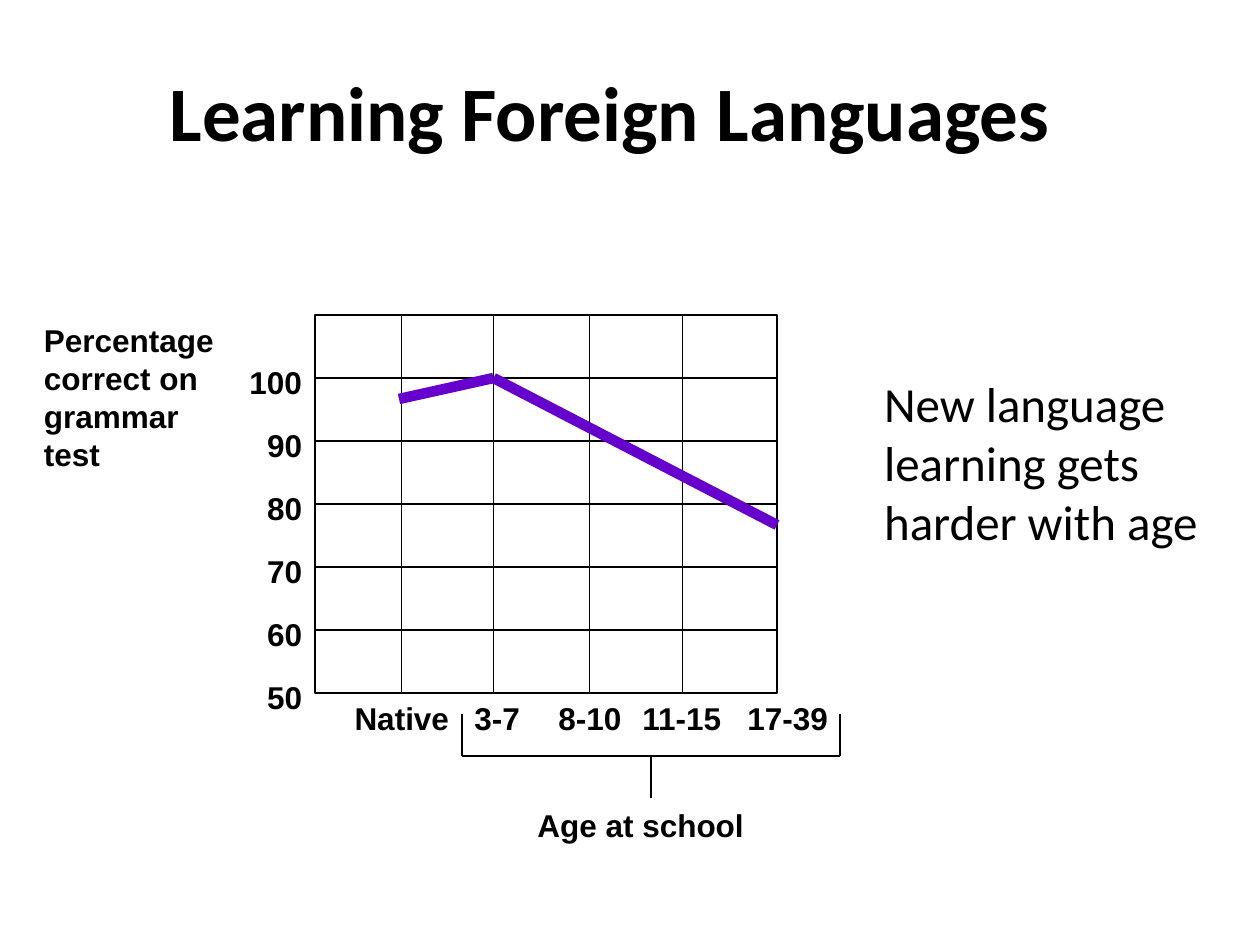
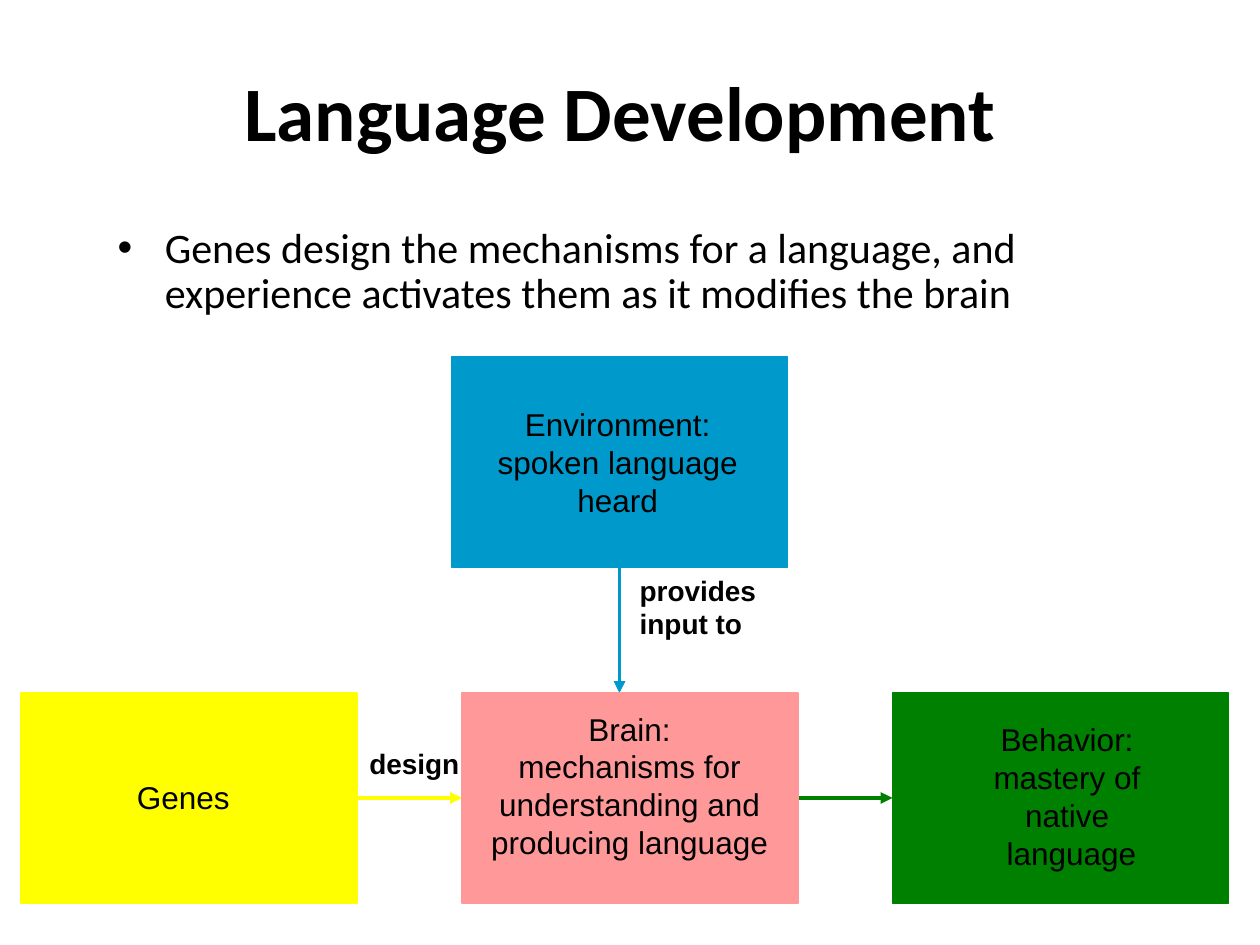
from itertools import pairwise

from lxml.etree import SubElement
from pptx import Presentation
from pptx.dml.color import RGBColor
from pptx.enum.shapes import MSO_CONNECTOR, MSO_SHAPE
from pptx.enum.text import MSO_ANCHOR, MSO_AUTO_SIZE, PP_ALIGN
from pptx.oxml.ns import qn
from pptx.util import Pt

BLACK = RGBColor(0x00, 0x00, 0x00)
WHITE = RGBColor(0xFF, 0xFF, 0xFF)
PURPLE = RGBColor(0x66, 0x00, 0xCC)
YELLOW = RGBColor(0xFF, 0xFF, 0x00)
BLUE = RGBColor(0x00, 0x99, 0xCC)
PINK = RGBColor(0xFF, 0x99, 0x99)
GREEN = RGBColor(0x00, 0x80, 0x00)

# Font formats
TITLE = {"name": "Calibri", "size": Pt(44), "bold": True}
POINT = {"name": "Calibri", "size": Pt(28)}
LIST = {"name": "Calibri", "size": Pt(24)}
LABEL = {"name": "Arial", "size": Pt(18), "bold": True}
PLAIN = {"name": "Arial", "size": Pt(18), "bold": False}
NOTE = {"name": "Arial", "size": Pt(16), "bold": True}

# Slide 1: test scores by age; boxes are (left, top, width, height)
AGE_TITLE = "Learning Foreign Languages"
AGE_POINT = "New language learning gets harder with age"
SCORES = ["100", "90", "80", "70", "60", "50"]
AGES = [("Native", 195.5, 68.5), ("3-7", 264, 40.5), ("8-10", 312, 50.5),
        ("11-15", 360, 60.5), ("17-39", 420, 60.5)]
AXES = [(["Percentage", "correct on", "grammar", "test"], (18, 180, 117, 94)),
        (["Age at school"], (300, 457, 132.5, 29))]
GRID = (180, 180, 264, 216)
STEP = 36
COLS = [229.5, 282, 337, 390]
TREND = [(228, 228), (282, 216), (444, 300)]
BRACE = [(264, 408), (264, 432), (480, 432), (480, 408)]
STEM = [(372, 432), (372, 456)]

# Slide 2: flow from genes and environment to behavior
FLOW_TITLE = "Language Development"
FLOW_POINT = ("Genes design the mechanisms for a language, "
              "and experience activates them as it modifies the brain")
SIZE = (192, 120)
BLOCKS = [
    (YELLOW, (12, 396), ["Genes"], (70.5, 441, 68.5, 29)),
    (BLUE, (258, 204), ["Environment:", "spoken language", "heard"],
     (277, 228, 152, 73)),
    (PINK, (264, 396),
     ["Brain:", "mechanisms for", "understanding and", "producing language"],
     (273, 402, 173.5, 94)),
    (GREEN, (510, 396), ["Behavior:", "mastery of", "native", " language"],
     (560, 408, 99.5, 94)),
]
ARROWS = [(BLUE, (354, 324), (354, 396)),
          (YELLOW, (204, 456), (264, 456)),
          (GREEN, (456, 456), (510, 456))]
NOTES = [(["provides", "input to"], (358.5, 324, 86, 46)),
         (["design"], (204, 423, 66, 27))]


def place(shape, box):
    for side, value in zip(("left", "top", "width", "height"), box):
        setattr(shape, side, Pt(value))


def style(font, form):
    font.color.rgb = BLACK
    for name, value in form.items():
        setattr(font, name, value)


def write(frame, lines, form, align=None):
    """Put each line in its own paragraph of an unwrapped, growing frame."""
    frame.word_wrap = False
    frame.auto_size = MSO_AUTO_SIZE.SHAPE_TO_FIT_TEXT
    frame.vertical_anchor = MSO_ANCHOR.TOP
    for i, line in enumerate(lines):
        para = frame.add_paragraph() if i else frame.paragraphs[0]
        para.alignment = align
        run = para.add_run()
        run.text = line
        style(run.font, form)


def label(slide, lines, box, form=LABEL):
    write(slide.shapes.add_textbox(*map(Pt, box)).text_frame, lines, form)


def rect(slide, box, fill, edge):
    shape = slide.shapes.add_shape(MSO_SHAPE.RECTANGLE, *map(Pt, box))
    shape.shadow.inherit = False
    shape.fill.solid()
    shape.fill.fore_color.rgb = fill
    shape.line.color.rgb = edge
    shape.line.width = Pt(0.75)
    return shape


def line(slide, start, end, color=BLACK, width=0.75, head=False):
    link = slide.shapes.add_connector(
        MSO_CONNECTOR.STRAIGHT, *map(Pt, (*start, *end)))
    link.line.color.rgb = color
    link.line.width = Pt(width)
    props = link.line._get_or_add_ln()
    if head:
        SubElement(props, qn("a:tailEnd"), type="triangle")
    SubElement(link._element.spPr, qn("a:effectLst"))


def fill_in(holder, text, box, form):
    """Place and format a placeholder; return its only paragraph."""
    place(holder, box)
    frame = holder.text_frame
    frame.text = text
    frame.auto_size = MSO_AUTO_SIZE.NONE
    para = frame.paragraphs[0]
    style(para.runs[0].font, form)
    return para


def start(deck, title, width):
    slide = deck.slides.add_slide(deck.slide_layouts[1])
    para = fill_in(slide.shapes.title, title, (31.5, 18, width, 90), TITLE)
    para.alignment = PP_ALIGN.CENTER
    return slide


def bullet(para, indent, sign=None):
    props = para._p.get_or_add_pPr()
    props.set("marL", str(Pt(indent)))
    props.set("indent", str(-Pt(indent)))
    if sign:
        SubElement(props, qn("a:buChar"), char=sign)
    else:
        SubElement(props, qn("a:buNone"))


def age_slide(deck):
    slide = start(deck, AGE_TITLE, 634.5)
    para = fill_in(slide.placeholders[1], AGE_POINT, (498, 210, 204, 180), POINT)
    bullet(para, 0)

    left, top, width, height = GRID
    right, base = left + width, top + height
    rect(slide, GRID, WHITE, BLACK)
    for y in range(top + STEP, base, STEP):
        line(slide, (left, y), (right, y))
    for x in COLS:
        line(slide, (x, top), (x, base))

    for i, score in enumerate(SCORES):
        wide = 14.5 + 10 * len(score)
        label(slide, [score], (left - wide, top + 24 + STEP * i, wide, 29))
    for age, x, wide in AGES:
        label(slide, [age], (x, base, wide, 29))
    for lines, box in AXES:
        label(slide, lines, box)

    for path, color, width in ((BRACE, BLACK, 1.5), (STEM, BLACK, 1.5),
                               (TREND, PURPLE, 6)):
        for a, b in pairwise(path):
            line(slide, a, b, color, width)


def flow_slide(deck):
    slide = start(deck, FLOW_TITLE, 646)
    para = fill_in(slide.placeholders[1], FLOW_POINT, (60, 126, 624, 60), LIST)
    para.line_spacing = 0.9
    bullet(para, 27, "•")

    for color, a, b in ARROWS:
        line(slide, a, b, color, 2.25, head=True)
    for color, spot, lines, box in BLOCKS:
        rect(slide, (*spot, *SIZE), color, color)
        inner = rect(slide, box, color, color)
        write(inner.text_frame, lines, PLAIN, PP_ALIGN.CENTER)
    for lines, box in NOTES:
        label(slide, lines, box, NOTE)


def main():
    deck = Presentation()
    deck.slide_width, deck.slide_height = Pt(720), Pt(540)
    age_slide(deck)
    flow_slide(deck)
    deck.save("out.pptx")


if __name__ == "__main__":
    main()
